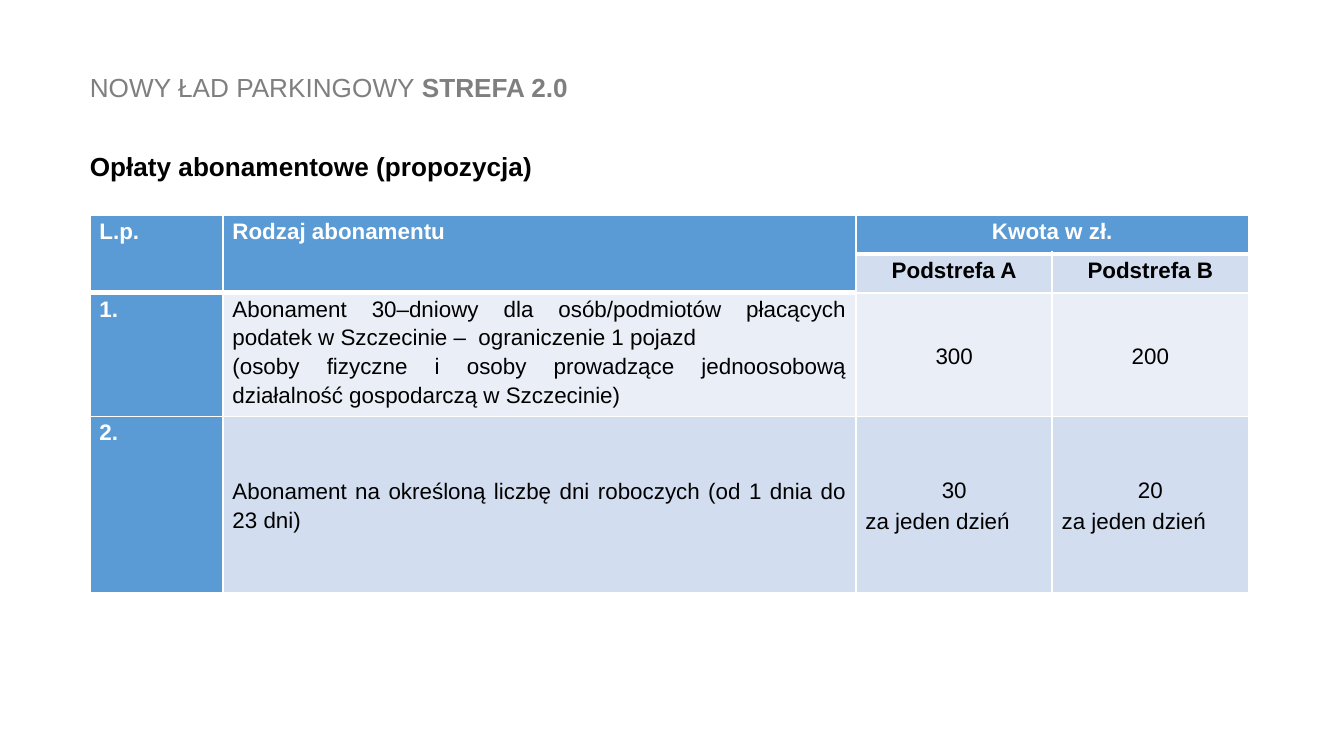
from dataclasses import dataclass

from lxml.etree import SubElement
from pptx import Presentation
from pptx.dml.color import RGBColor
from pptx.enum.text import MSO_ANCHOR, MSO_AUTO_SIZE, PP_ALIGN
from pptx.oxml.ns import qn
from pptx.util import Inches, Pt


@dataclass(frozen=True)
class Theme:
    font: str = "Arial"
    heading_size: int = 14
    table_size: int = 12
    white: str = "FFFFFF"
    black: str = "000000"
    grey: str = "7F7F7F"
    blue: str = "5B9BD5"
    pale: str = "D2DEEF"
    palest: str = "EAEFF7"


theme = Theme()


def add_span(para, text, size, color, bold=False):
    span = para.add_run()
    span.text = text
    span.font.name = theme.font
    span.font.size = Pt(size)
    span.font.bold = bold
    span.font.color.rgb = RGBColor.from_string(color)


def set_borders(cell, bottom_width):
    """Draw white cell borders, 1 pt wide except for the bottom one."""
    properties = cell._tc.get_or_add_tcPr()
    for side, width in (("L", 1), ("R", 1), ("T", 1), ("B", bottom_width)):
        line = SubElement(properties, qn(f"a:ln{side}"), w=str(Pt(width)))
        fill = SubElement(line, qn("a:solidFill"))
        SubElement(fill, qn("a:srgbClr"), val=theme.white)


# A 16:9 page
deck = Presentation()
deck.slide_width = Inches(10)
deck.slide_height = Inches(10) * 9 // 16
page = deck.slides.add_slide(deck.slide_layouts[6])

# Headings: top, width, wrap, spans of (text, color, bold)
headings = [
    (0.48, 8.22, True, [("NOWY ŁAD PARKINGOWY ", theme.grey, False),
                        ("STREFA 2.0", theme.grey, True)]),
    (1.07, 3.5, False, [("Opłaty abonamentowe (propozycja)", theme.black, True)]),
]
for top, width, wrap, spans in headings:
    box = page.shapes.add_textbox(Inches(0.57), Inches(top), Inches(width), Inches(0.34))
    frame = box.text_frame
    frame.word_wrap = wrap
    frame.auto_size = MSO_AUTO_SIZE.SHAPE_TO_FIT_TEXT
    for text, color, bold in spans:
        add_span(frame.paragraphs[0], text, theme.heading_size, color, bold)

# Fee table
column_widths = [0.99, 4.71, 1.46, 1.46]
row_heights = [0.29, 0.29, 0.88, 1.31]
row_fills = [theme.blue, theme.pale, theme.palest, theme.pale]
center, justify = PP_ALIGN.CENTER, PP_ALIGN.JUSTIFY

# Each cell is a list of (text, alignment) paragraphs; merged-away cells are empty
rows = [
    [[("L.p.", justify)], [("Rodzaj abonamentu", justify)], [("Kwota w zł.", center)], []],
    [[], [], [("Podstrefa A", center)], [("Podstrefa B", center)]],
    [[("1.", justify)],
     [("Abonament 30–dniowy dla osób/podmiotów płacących podatek w Szczecinie –  "
       "ograniczenie 1 pojazd", justify),
      ("(osoby fizyczne i osoby prowadzące jednoosobową działalność gospodarczą "
       "w Szczecinie)", justify)],
     [("300", center)], [("200", center)]],
    [[("2.", justify)],
     [("Abonament na określoną liczbę dni roboczych (od 1 dnia do 23 dni)", justify)],
     [("30", center), ("za jeden dzień", justify)],
     [("20", center), ("za jeden dzień", justify)]],
]

table = page.shapes.add_table(
    len(rows), len(column_widths), Inches(0.67), Inches(1.6),
    Inches(sum(column_widths)), Inches(sum(row_heights))).table
table.horz_banding = False
table.first_col = True
for column, width in zip(table.columns, column_widths):
    column.width = Inches(width)
for row, height in zip(table.rows, row_heights):
    row.height = Inches(height)

for start, end in (((0, 0), (1, 0)), ((0, 1), (1, 1)), ((0, 2), (0, 3))):
    table.cell(*start).merge(table.cell(*end))

for r, row in enumerate(rows):
    for c, paragraphs in enumerate(row):
        cell = table.cell(r, c)
        is_header = r == 0 or c == 0 or (r == 1 and c == 1)
        closes_header = r == 0 or (r == 1 and c < 2)
        set_borders(cell, 3 if closes_header else 1)
        cell.fill.solid()
        cell.fill.fore_color.rgb = RGBColor.from_string(theme.blue if is_header else row_fills[r])
        cell.margin_left = cell.margin_right = Inches(0.07)
        cell.margin_top = cell.margin_bottom = Inches(0)
        # The first body description stays at the top, beside its number
        centered = r > 1 and c > 0 and (r, c) != (2, 1)
        cell.vertical_anchor = MSO_ANCHOR.MIDDLE if centered else MSO_ANCHOR.TOP
        for index, (text, alignment) in enumerate(paragraphs):
            para = cell.text_frame.add_paragraph() if index else cell.text_frame.paragraphs[0]
            para.alignment = alignment
            para.line_spacing = 1.15
            if index and r == 3:
                para.space_before = Pt(1.3)
            add_span(para, text, theme.table_size,
                     theme.white if is_header else theme.black, is_header or r == 1)

deck.save("out.pptx")
